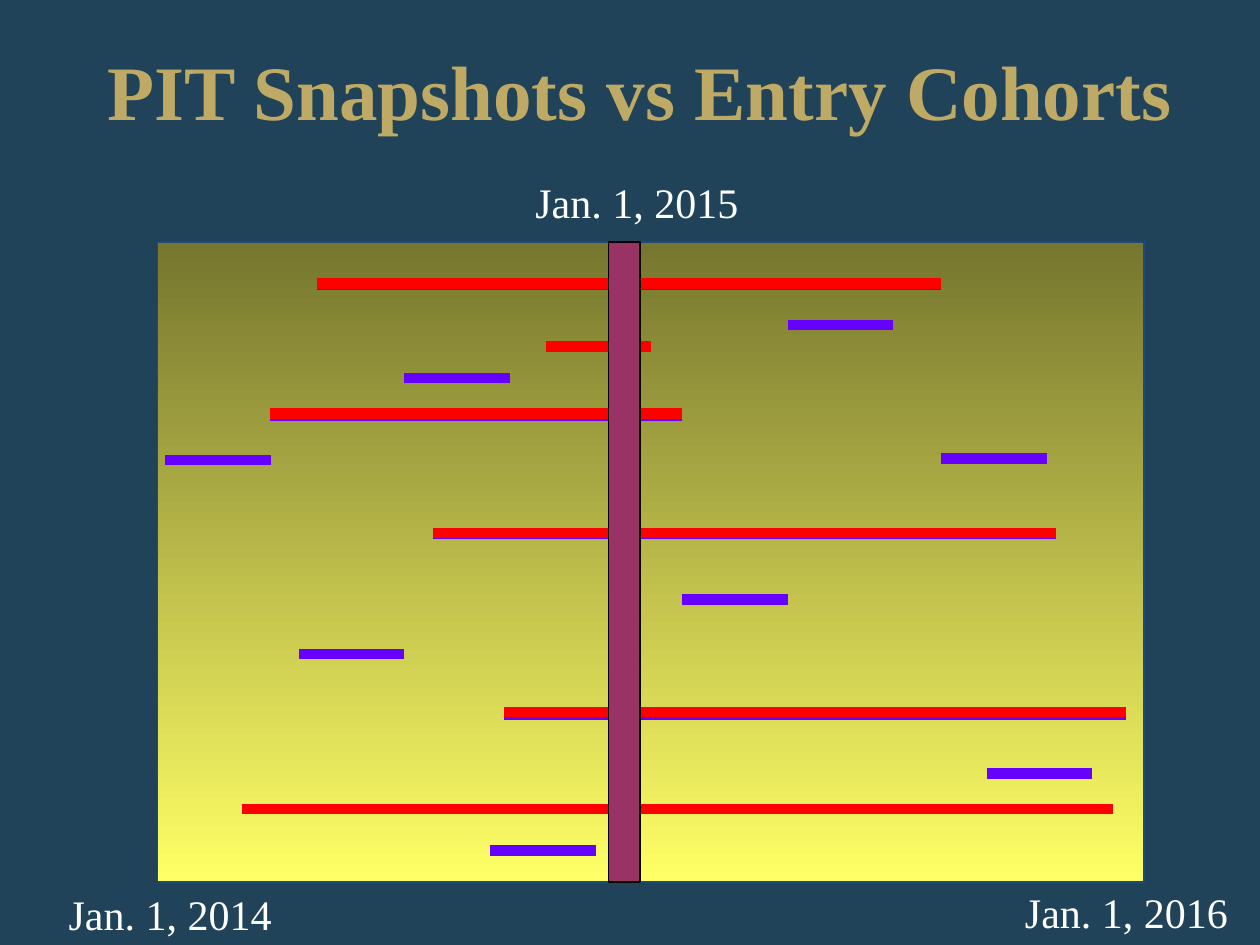
from dataclasses import dataclass

import pptx
import pptx.dml.color
import pptx.enum.shapes
import pptx.enum.text
import pptx.oxml.ns
import pptx.util
from lxml import etree

Inches = pptx.util.Inches
Pt = pptx.util.Pt

COLORS = {
    "background": "204359",
    "title": "BEAA64",
    "label": "FFFFFF",
    "short_stay": "6600FF",
    "long_stay": "FF0000",
    "snapshot": "993366",
    "snapshot_edge": "000000",
    "period_top": "76762F",
    "period_bottom": "FFFF66",
    "period_edge": "1F497D",
}
TOP, HEIGHT = 1.92, 5.08
SHORT_LENGTH = 0.84


@dataclass
class Stay:
    left: float
    right: float
    y: float
    under_offset: float = 0


@dataclass
class DateLabel:
    text: str
    left: float
    top: float
    width: float


LONG_STAYS = [
    Stay(1.92, 8.83, 6.42),
    Stay(4, 8.94, 5.65, 0.02),
    Stay(2.14, 5.41, 3.28, 0.02),
    Stay(3.44, 8.38, 4.23, 0.01),
    Stay(2.52, 7.47, 2.25, 0.01),
    Stay(4.33, 5.17, 2.75),
]
SHORT_STAYS = [
    Stay(left, left + SHORT_LENGTH, y)
    for left, y in [
        (2.37, 5.19), (7.47, 3.64), (5.41, 4.76), (7.83, 6.14),
        (1.31, 3.65), (3.89, 6.75), (6.25, 2.58), (3.21, 3),
    ]
]
DATE_LABELS = [
    DateLabel("Jan. 1, 2015", 3.89, 1.35, 2.33),
    DateLabel("Jan. 1, 2016", 7.73, 6.99, 2.42),
    DateLabel("Jan. 1, 2014", 0.14, 7, 2.42),
]


def rgb(name: str) -> pptx.dml.color.RGBColor:
    return pptx.dml.color.RGBColor.from_string(COLORS[name])


def apply(obj, values: dict) -> None:
    for name, value in values.items():
        setattr(obj, name, value)


def write(sp, text: str, size: float, color: str, bold: bool) -> None:
    tf = sp.text_frame
    tf.word_wrap = True
    p = tf.paragraphs[0]
    p.alignment = pptx.enum.text.PP_ALIGN.CENTER
    r = p.add_run()
    r.text = text
    apply(r.font, {"name": "Times New Roman", "size": Pt(size), "bold": bold})
    r.font.color.rgb = rgb(color)


def add_title(s, text: str) -> None:
    sp = s.shapes.title
    apply(sp, {"left": Inches(0.58), "top": Inches(0.17),
               "width": Inches(9), "height": Inches(1.08)})
    sp.text_frame.vertical_anchor = pptx.enum.text.MSO_ANCHOR.MIDDLE
    write(sp, text, 44, "title", True)


def add_label(s, label: DateLabel) -> None:
    sp = s.shapes.add_textbox(Inches(label.left), Inches(label.top),
                              Inches(label.width), Inches(0.5))
    write(sp, label.text, 24, "label", False)


def add_block(s, left: float, width: float, edge: str):
    sp = s.shapes.add_shape(pptx.enum.shapes.MSO_SHAPE.RECTANGLE, Inches(left),
                            Inches(TOP), Inches(width), Inches(HEIGHT))
    sp.shadow.inherit = False
    sp.line.color.rgb = rgb(edge)
    sp.line.width = Pt(0.75)
    return sp


def add_stay(s, stay: Stay, color: str, offset: float = 0) -> None:
    y = Inches(stay.y + offset)
    line = s.shapes.add_connector(pptx.enum.shapes.MSO_CONNECTOR.STRAIGHT,
                                  Inches(stay.left), y, Inches(stay.right), y)
    line.line.color.rgb = rgb(color)
    line.line.width = Pt(6)
    etree.SubElement(line._element.spPr, pptx.oxml.ns.qn("a:effectLst"))


def main() -> None:
    prs = pptx.Presentation()
    apply(prs, {"slide_width": Inches(10), "slide_height": Inches(7.5)})
    s = prs.slides.add_slide(prs.slide_layouts[5])
    s.background.fill.solid()
    s.background.fill.fore_color.rgb = rgb("background")
    add_title(s, "PIT Snapshots vs Entry Cohorts")

    period = add_block(s, 1.25, 7.83, "period_edge")
    period.fill.gradient()
    period.fill.gradient_angle = 270
    for stop, position, color in zip(period.fill.gradient_stops, (0, 1),
                                     ("period_top", "period_bottom")):
        stop.position = position
        stop.color.rgb = rgb(color)

    for stay in LONG_STAYS:
        add_stay(s, stay, "short_stay", stay.under_offset)
        add_stay(s, stay, "long_stay")

    snapshot = add_block(s, 4.83, 0.25, "snapshot_edge")
    snapshot.fill.solid()
    snapshot.fill.fore_color.rgb = rgb("snapshot")

    for stay in SHORT_STAYS:
        add_stay(s, stay, "short_stay")
    for label in DATE_LABELS:
        add_label(s, label)
    prs.save("out.pptx")


if __name__ == "__main__":
    main()
